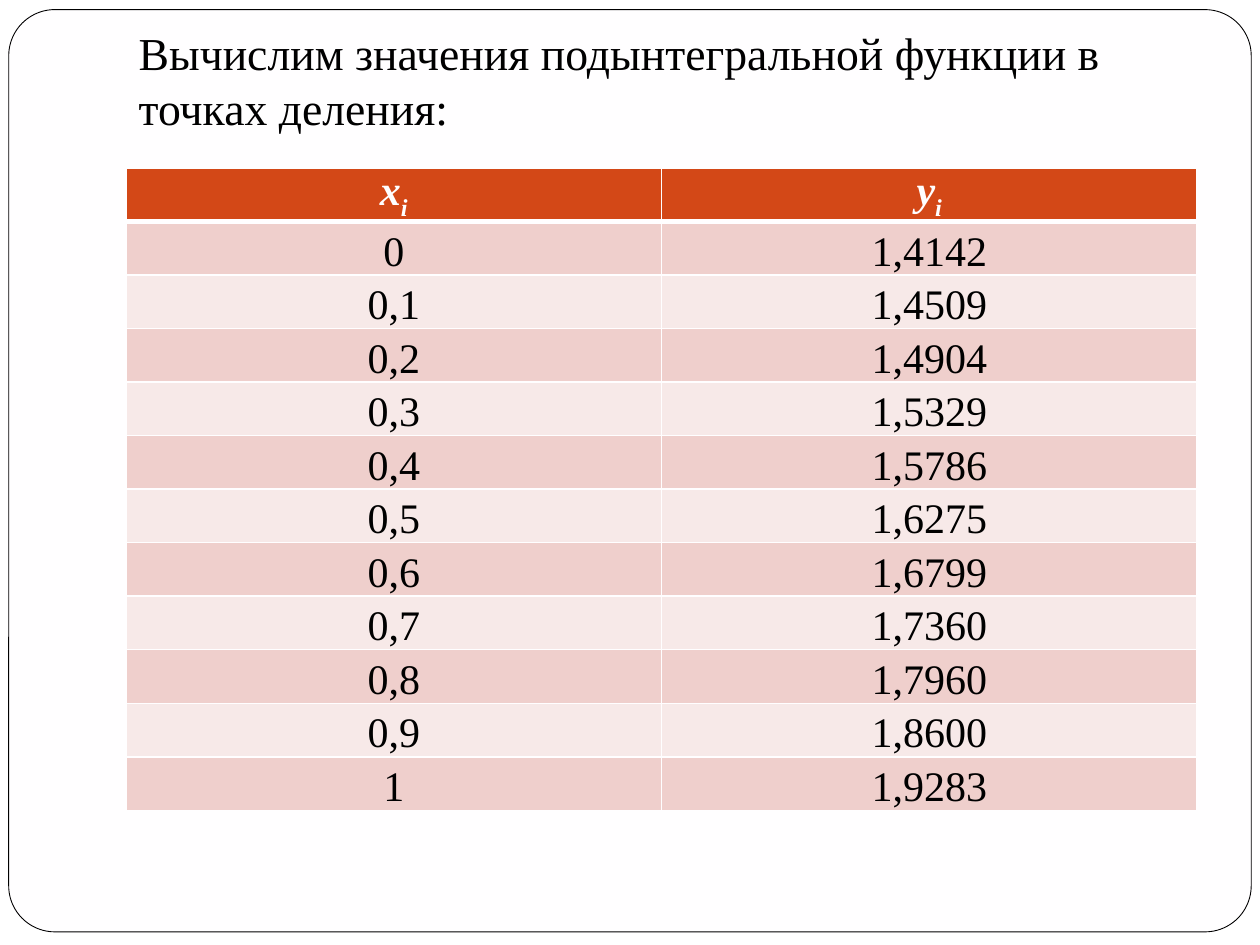
from typing import NamedTuple

from lxml import etree
from pptx import Presentation
from pptx import util as u
from pptx.dml import color
from pptx.enum import shapes, text
from pptx.oxml import ns

FONT = "Times New Roman"
PAPER, INK = "FFFEFF", "000000"
HEADER_FILL, BAND_FILLS = "D34817", ("EFCFCC", "F7E9E8")
ROW_HEIGHT, COLUMN_WIDTH = 30.6, 306


class Point(NamedTuple):
    x: str
    y: str


VARIABLES = Point("x", "y")
POINTS = [
    Point("0", "1,4142"),
    Point("0,1", "1,4509"),
    Point("0,2", "1,4904"),
    Point("0,3", "1,5329"),
    Point("0,4", "1,5786"),
    Point("0,5", "1,6275"),
    Point("0,6", "1,6799"),
    Point("0,7", "1,7360"),
    Point("0,8", "1,7960"),
    Point("0,9", "1,8600"),
    Point("1", "1,9283"),
]


def rgb(value: str) -> color.RGBColor:
    return color.RGBColor.from_string(value)


def format_run(run, size: float, hex_color: str, emphasis: bool = False) -> None:
    font = run.font
    font.name, font.size = FONT, u.Pt(size)
    font.bold = font.italic = emphasis
    font.color.rgb = rgb(hex_color)


def add_borders(cell, bottom_width: float) -> None:
    properties = cell._tc.get_or_add_tcPr()
    for side, width in (("L", 1), ("R", 1), ("T", 1), ("B", bottom_width)):
        line = etree.SubElement(properties, ns.qn(f"a:ln{side}"), w=str(u.Pt(width)))
        fill = etree.SubElement(line, ns.qn("a:solidFill"))
        etree.SubElement(fill, ns.qn("a:srgbClr"), val=PAPER)


def style_cell(cell, fill: str, bottom_width: float, anchor) -> None:
    add_borders(cell, bottom_width)
    cell.fill.solid()
    cell.fill.fore_color.rgb = rgb(fill)
    cell.margin_left = cell.margin_right = u.Pt(5)
    cell.margin_top = cell.margin_bottom = 0
    cell.vertical_anchor = anchor
    cell.text_frame.paragraphs[0].alignment = text.PP_ALIGN.CENTER


def fill_header(cell, variable: str) -> None:
    style_cell(cell, HEADER_FILL, 3, text.MSO_ANCHOR.MIDDLE)
    paragraph = cell.text_frame.paragraphs[0]
    for part in (variable, "i"):
        run = paragraph.add_run()
        run.text = part
        format_run(run, 24, PAPER, emphasis=True)
    run.font._element.set("baseline", "-25000")  # subscript index


def fill_value(cell, value: str, fill: str, top_row: bool) -> None:
    cell.text_frame.text = value
    style_cell(cell, fill, 1, text.MSO_ANCHOR.BOTTOM)
    if top_row:  # shares the thick edge under the header
        cell._tc.tcPr.find(ns.qn("a:lnT")).set("w", str(u.Pt(3)))
    format_run(cell.text_frame.paragraphs[0].runs[0], 24, INK)


def add_title(slide) -> None:
    title = slide.shapes.title
    title.left, title.top, title.width, title.height = map(u.Pt, (72, 21.6, 612, 62.6))
    frame = title.text_frame
    frame.text = "Вычислим значения подынтегральной функции в точках деления:"
    frame.word_wrap = True
    frame.auto_size = text.MSO_AUTO_SIZE.NONE
    frame.vertical_anchor = text.MSO_ANCHOR.BOTTOM
    frame.margin_left = frame.margin_right = frame.margin_bottom = u.Pt(7.2)
    frame.margin_top = u.Pt(3.6)
    paragraph = frame.paragraphs[0]
    paragraph.alignment = text.PP_ALIGN.LEFT
    format_run(paragraph.runs[0], 26.1, INK)


def add_page_frame(slide) -> None:
    outline = slide.shapes.add_shape(
        shapes.MSO_SHAPE.ROUNDED_RECTANGLE, *map(u.Pt, (5, 5.5, 710, 527)))
    outline.adjustments[0] = 0.05
    outline.shadow.inherit = False
    outline.fill.solid()
    outline.fill.fore_color.rgb = rgb(PAPER)
    outline.line.color.rgb = rgb(INK)
    outline.line.width = u.Pt(0.5)
    slide.shapes.title.element.addprevious(outline.element)  # behind the title


def add_value_table(slide) -> None:
    row_count = len(POINTS) + 1
    table = slide.shapes.add_table(
        row_count, 2, u.Pt(72), u.Pt(96),
        u.Pt(2 * COLUMN_WIDTH), u.Pt(row_count * ROW_HEIGHT)).table
    for row in table.rows:
        row.height = u.Pt(ROW_HEIGHT)
    for column, variable in enumerate(VARIABLES):
        fill_header(table.cell(0, column), variable)
    for index, point in enumerate(POINTS):
        for column, value in enumerate(point):
            fill_value(table.cell(index + 1, column), value,
                       BAND_FILLS[index % 2], index == 0)


def main() -> None:
    presentation = Presentation()
    presentation.slide_width, presentation.slide_height = u.Pt(720), u.Pt(540)
    slide = presentation.slides.add_slide(presentation.slide_layouts[5])
    # Page
    slide.background.fill.solid()
    slide.background.fill.fore_color.rgb = rgb("FFFFFF")
    add_page_frame(slide)
    # Content
    add_title(slide)
    add_value_table(slide)
    presentation.save("out.pptx")


if __name__ == "__main__":
    main()
